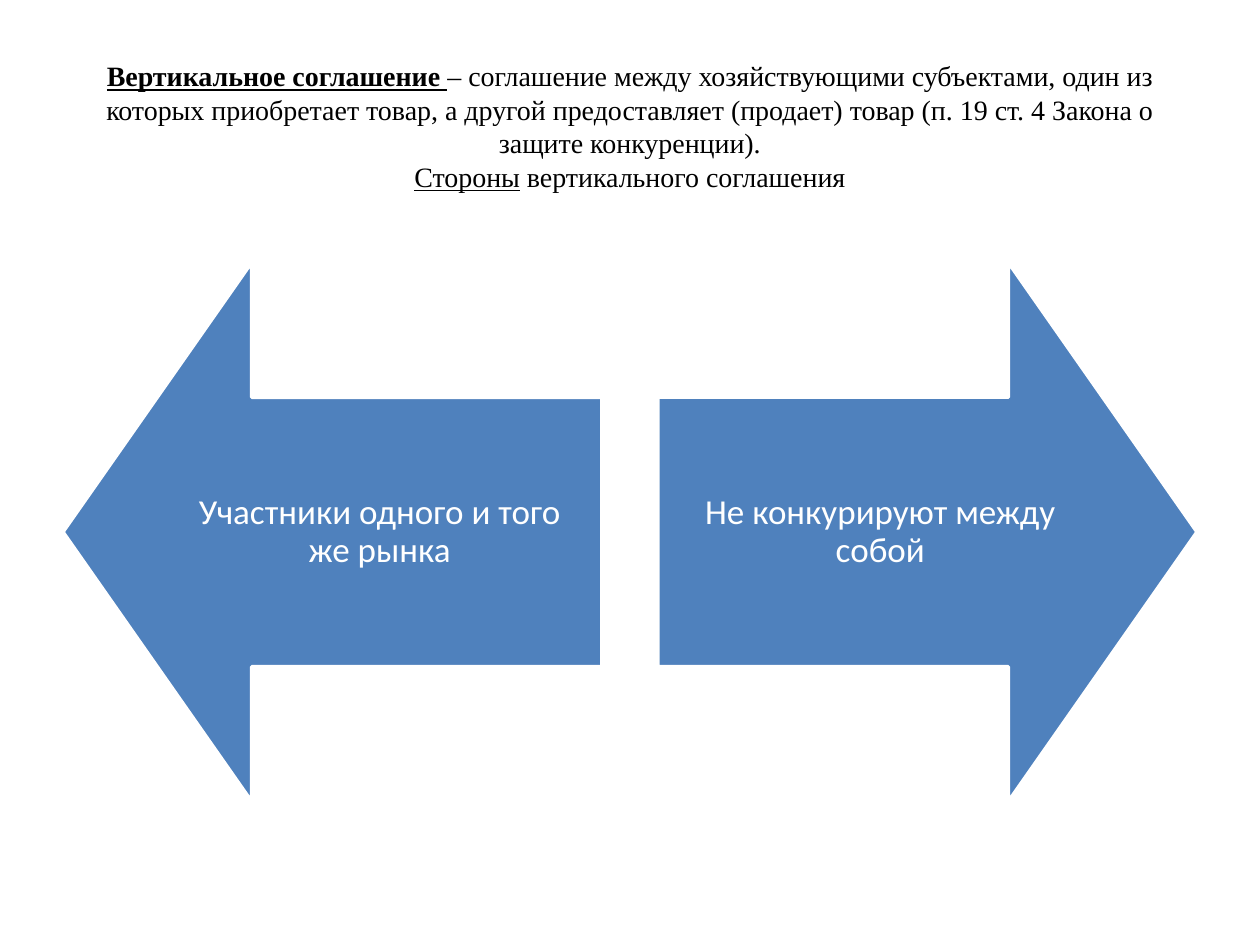
from dataclasses import dataclass

from pptx import Presentation
from pptx.dml.color import RGBColor
from pptx.enum.shapes import MSO_SHAPE
from pptx.enum.text import MSO_ANCHOR, PP_ALIGN
from pptx.util import Pt

UP_ARROW = MSO_SHAPE.UP_ARROW
MIDDLE = MSO_ANCHOR.MIDDLE
CENTER = PP_ALIGN.CENTER


@dataclass(frozen=True)
class Theme:
    ink: RGBColor = RGBColor(0, 0, 0)
    paper: RGBColor = RGBColor(255, 255, 255)
    accent: RGBColor = RGBColor(0x4F, 0x81, 0xBD)
    title_font: str = "Times New Roman"
    label_font: str = "Calibri"
    title_size: int = 16
    label_size: int = 20


THEME = Theme()
SLIDE_WIDTH, SLIDE_HEIGHT = 720, 540
MARGIN = 36
ARROW_SIZE = 308
ARROW_TOP = 150
LABEL_WIDTH, LABEL_HEIGHT = 254, ARROW_SIZE / 2
LABEL_INSET = 11.5

TITLE_LINES = [
    [
        ("Вертикальное соглашение ", {"bold": True, "underline": True}),
        ("– соглашение между хозяйствующими субъектами, один из которых "
         "приобретает товар, а другой предоставляет (продает) товар "
         "(п. 19 ст. 4 Закона о защите конкуренции).", {}),
    ],
    [("Стороны", {"underline": True}), (" вертикального соглашения", {})],
]


def set_attributes(target, values):
    for name, value in values.items():
        setattr(target, name, value)


def add_run(paragraph, text, font_name, size, color, **style):
    run = paragraph.add_run()
    run.text = text
    set_attributes(run.font, {"name": font_name, "size": Pt(size), **style})
    run.font.color.rgb = color


def add_centered_text(slide, left, top, width, height, **frame_format):
    """Add a wrapping, middle-anchored text box and return its paragraph."""
    box = slide.shapes.add_textbox(Pt(left), Pt(top), Pt(width), Pt(height))
    set_attributes(box.text_frame, {
        "word_wrap": True, "vertical_anchor": MIDDLE, **frame_format})
    paragraph = box.text_frame.paragraphs[0]
    paragraph.alignment = CENTER
    return paragraph


def add_title(slide):
    paragraph = add_centered_text(
        slide, MARGIN, 21.6, SLIDE_WIDTH - 2 * MARGIN, 100.8)
    for index, line in enumerate(TITLE_LINES):
        if index:
            paragraph.add_line_break()
        for text, style in line:
            add_run(paragraph, text, THEME.title_font, THEME.title_size,
                    THEME.ink, **style)


def add_arrow(slide, left, rotation):
    arrow = slide.shapes.add_shape(
        UP_ARROW, Pt(left), Pt(ARROW_TOP), Pt(ARROW_SIZE), Pt(ARROW_SIZE))
    arrow.rotation = rotation
    arrow.adjustments[0] = 0.5
    arrow.adjustments[1] = 0.35
    arrow.shadow.inherit = False
    arrow.fill.solid()
    arrow.fill.fore_color.rgb = THEME.accent
    arrow.line.color.rgb = THEME.paper
    arrow.line.width = Pt(2)


def add_arrow_label(slide, left, text):
    sides = ("left", "top", "right", "bottom")
    insets = {f"margin_{side}": Pt(LABEL_INSET) for side in sides}
    top = ARROW_TOP + (ARROW_SIZE - LABEL_HEIGHT) / 2
    paragraph = add_centered_text(
        slide, left, top, LABEL_WIDTH, LABEL_HEIGHT, **insets)
    paragraph.line_spacing = 0.9
    add_run(paragraph, text, THEME.label_font, THEME.label_size, THEME.paper)


def main():
    presentation = Presentation()
    presentation.slide_width = Pt(SLIDE_WIDTH)
    presentation.slide_height = Pt(SLIDE_HEIGHT)
    slide = presentation.slides.add_slide(presentation.slide_layouts[6])

    add_title(slide)
    right_arrow_left = SLIDE_WIDTH - MARGIN - ARROW_SIZE
    left_label_left = MARGIN + ARROW_SIZE - LABEL_WIDTH
    add_arrow(slide, MARGIN, 270)
    add_arrow_label(slide, left_label_left, "Участники одного и того же рынка")
    add_arrow(slide, right_arrow_left, 90)
    add_arrow_label(slide, right_arrow_left, "Не конкурируют между собой")

    presentation.save("out.pptx")


if __name__ == "__main__":
    main()
